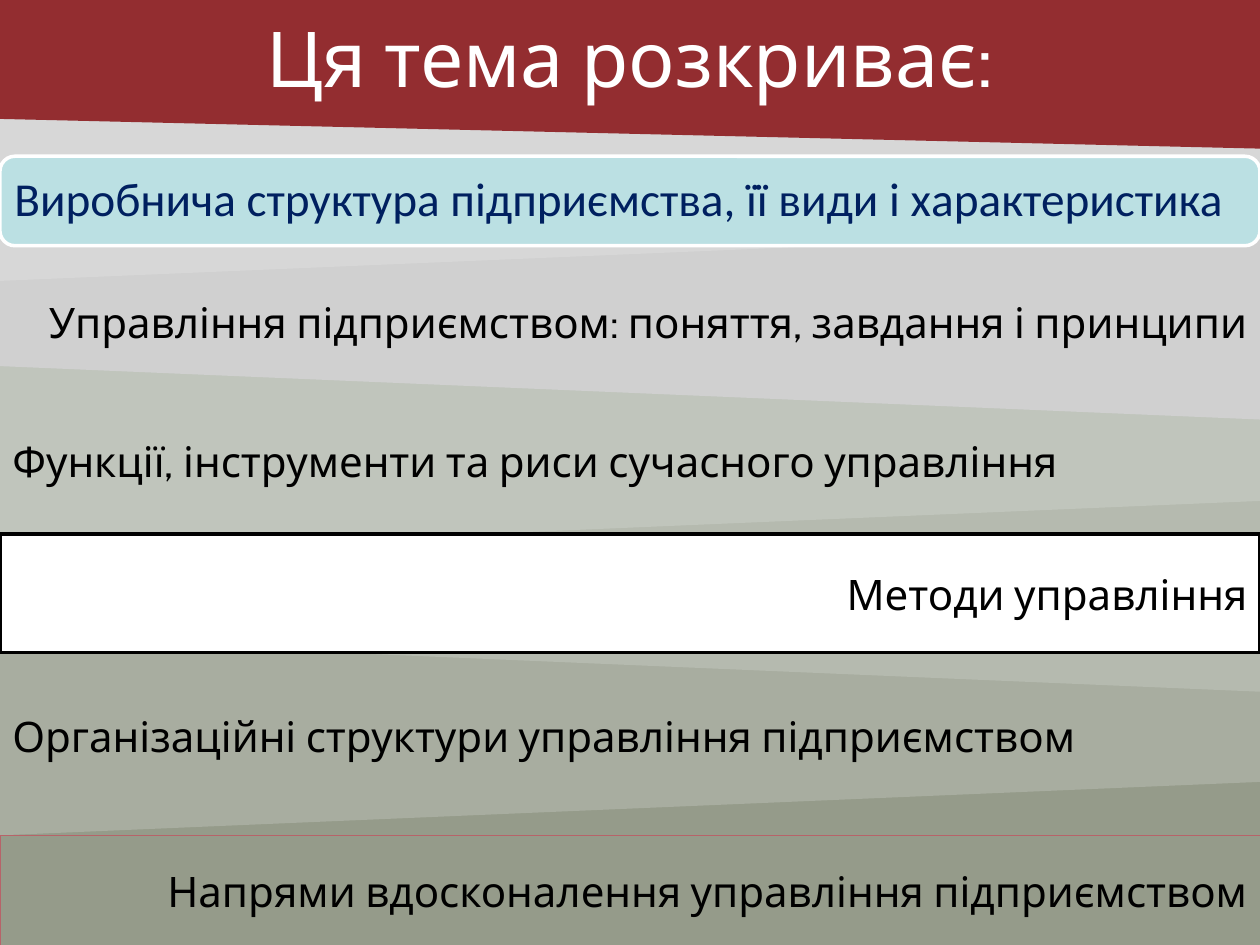
import pptx
import pptx.util
import pptx.dml.color
import pptx.enum.dml
import pptx.enum.shapes
import pptx.enum.text
import pptx.oxml.ns
import lxml.etree

Inches, Pt = pptx.util.Inches, pptx.util.Pt
SHAPE = pptx.enum.shapes.MSO_SHAPE
ALIGN = pptx.enum.text.PP_ALIGN

WIDTH, HEIGHT = 10, 7.5
BAND_HEIGHT = 2.12
COLORS = {
    "background": "E6E6E6", "title band": "932D30", "white": "FFFFFF",
    "black": "000000", "navy": "002060", "aqua": "BBE0E3", "rose": "B76369",
}
TITLE = "Ця тема розкриває:"

# Slanted bands from back to front: top, height, colour, flips
BANDS = [
    (5.38, BAND_HEIGHT, "959B8A", ["flipH"]),
    (4.51, BAND_HEIGHT, "A8ADA0", ["flipH", "flipV"]),
    (3.37, BAND_HEIGHT, "B5BAAF", ["flipV"]),
    (2.28, BAND_HEIGHT, "C0C5BC", ["flipH", "flipV"]),
    (1.21, BAND_HEIGHT, "D0D0D0", ["flipV"]),
    (0.11, BAND_HEIGHT, "D7D7D7", ["flipH", "flipV"]),
    (0, 1.18, COLORS["title band"], ["flipV"]),
]

# Topics: text, top, height, alignment, kind
TOPICS = [
    ("Напрями вдосконалення управління підприємством", 6.63, 0.87, ALIGN.RIGHT, "body"),
    ("Виробнича структура підприємства, її види і характеристика", 1.24, 0.71, ALIGN.LEFT, "card"),
    ("Управління підприємством: поняття, завдання і принципи", 2.04, 1.02, ALIGN.RIGHT, "plain"),
    ("Функції, інструменти та риси сучасного управління", 3.2, 0.91, ALIGN.LEFT, "plain"),
    ("Методи управління", 4.24, 0.94, ALIGN.RIGHT, "frame"),
    ("Організаційні структури управління підприємством", 5.31, 1.05, ALIGN.LEFT, "plain"),
]


def rgb(value):
    return pptx.dml.color.RGBColor.from_string(value)


def place(shape, top, height):
    shape.left, shape.top = Inches(0), Inches(top)
    shape.width, shape.height = Inches(WIDTH), Inches(height)


def add_panel(slide, preset, top, height, fill, line=None):
    panel = slide.shapes.add_shape(preset, 0, Inches(top), Inches(WIDTH), Inches(height))
    panel.shadow.inherit = False
    panel.fill.solid()
    panel.fill.fore_color.rgb = rgb(fill)
    if line:
        panel.line.color.rgb = rgb(line)
        panel.line.width = Pt(2)
    else:
        panel.line.fill.background()
    return panel


def write(shape, text, align, size=24, color="black", font="Cabin"):
    frame = shape.text_frame
    frame.text = text
    frame.word_wrap = True
    frame.auto_size = pptx.enum.text.MSO_AUTO_SIZE.NONE
    frame.vertical_anchor = pptx.enum.text.MSO_ANCHOR.MIDDLE
    para = frame.paragraphs[0]
    para.alignment = align
    para.space_before = Pt(0)
    span = para.runs[0]
    span.font.size = Pt(size)
    span.font.name = font
    span.font.color.rgb = rgb(COLORS[color])
    return para


deck = pptx.Presentation()
deck.slide_width, deck.slide_height = Inches(WIDTH), Inches(HEIGHT)
page = deck.slides.add_slide(deck.slide_layouts[1])
page.background.fill.solid()
page.background.fill.fore_color.rgb = rgb(COLORS["background"])
title, body = page.shapes.title, page.placeholders[1]

# Background bands
for top, height, fill, flips in BANDS:
    band = add_panel(page, SHAPE.FLOWCHART_MANUAL_INPUT, top, height, fill)
    for flip in flips:
        band.element.spPr.xfrm.set(flip, "1")

# Placeholders go in front of the bands
for holder in (title, body):
    page.shapes._spTree.append(holder.element)

place(title, -0.04, 0.98)
write(title, TITLE, ALIGN.CENTER, 44, "white")

# Topics
for text, top, height, align, kind in TOPICS:
    if kind == "card":
        card = add_panel(page, SHAPE.ROUNDED_RECTANGLE, top, height,
                         COLORS["aqua"], COLORS["white"])
        card.text_frame.margin_left = card.text_frame.margin_right = Inches(0.08)
        write(card, text, align, 27, "navy", "Calibri").line_spacing = 0.9
    elif kind == "frame":
        frame_box = add_panel(page, SHAPE.RECTANGLE, top, height,
                              COLORS["white"], COLORS["black"])
        write(frame_box, text, align)
    elif kind == "body":
        place(body, top, height)
        body.line.color.rgb = rgb(COLORS["rose"])
        body.line.width = Pt(0.05)
        body.line.dash_style = pptx.enum.dml.MSO_LINE.ROUND_DOT
        properties = write(body, text, align)._p.get_or_add_pPr()
        properties.set("marL", "0")
        properties.set("indent", "0")
        lxml.etree.SubElement(properties, pptx.oxml.ns.qn("a:buNone"))
    else:
        box = page.shapes.add_textbox(0, Inches(top), Inches(WIDTH), Inches(height))
        write(box, text, align)

deck.save("out.pptx")
